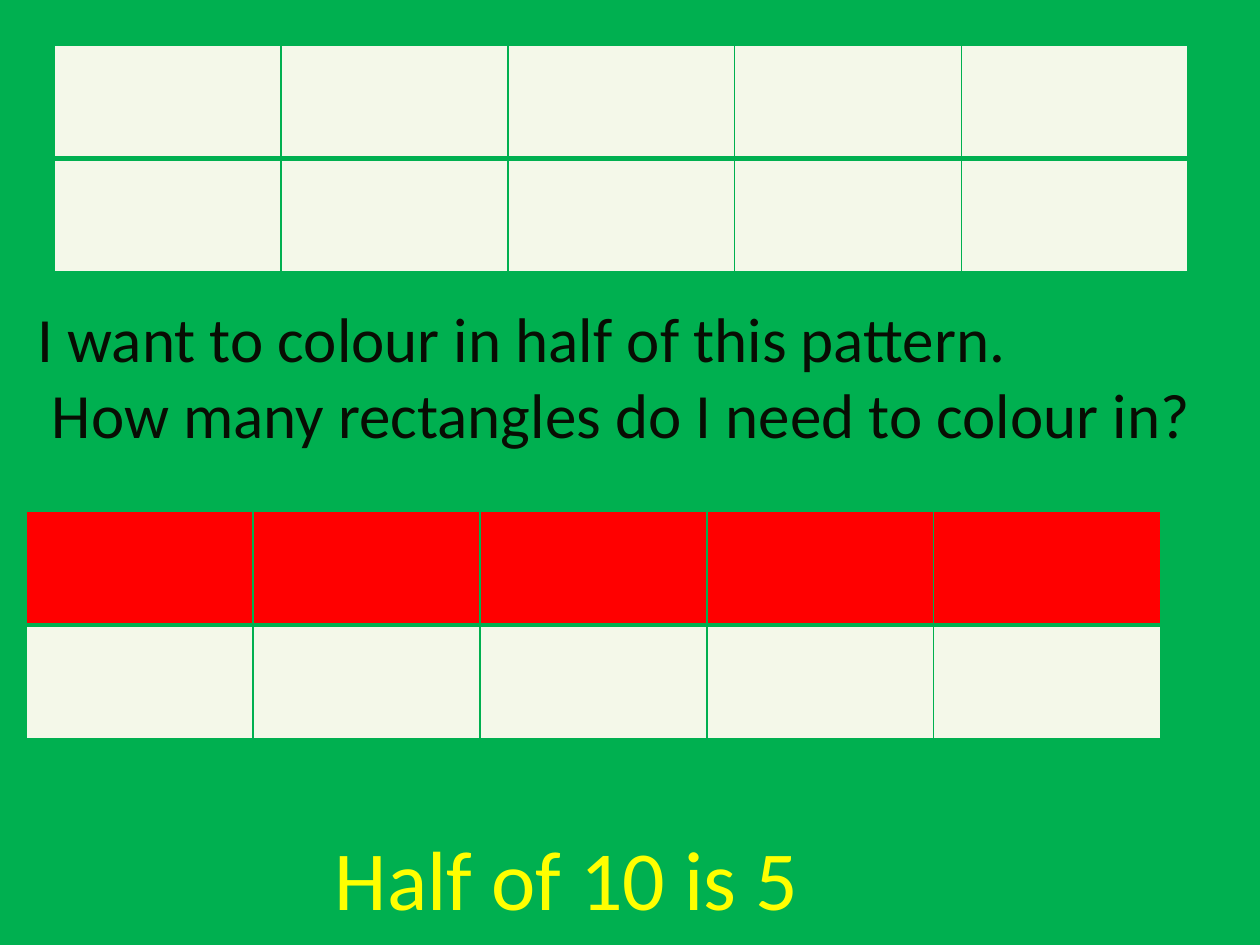
from dataclasses import dataclass
from lxml.etree import SubElement
from pptx import Presentation
from pptx.dml.color import RGBColor
from pptx.oxml.ns import qn
from pptx.util import Inches, Pt


@dataclass(frozen=True)
class Theme:
    font: str = "Calibri"
    green: str = "00B050"
    cream: str = "F4F8E9"
    red: str = "FF0000"
    ink: str = "080D03"
    yellow: str = "FFFF00"
    body: int = 36
    large: int = 48
    thin: int = 1
    thick: int = 3


class Board:
    def __init__(self, deck, theme):
        self.theme = theme
        self.slide = deck.slides.add_slide(deck.slide_layouts[6])
        self.paint(self.slide.background.fill, theme.green)

    def paint(self, fill, color):
        fill.solid()
        fill.fore_color.rgb = RGBColor.from_string(color)

    def edge(self, cell, side, width):
        line = SubElement(cell._tc.get_or_add_tcPr(), qn(f"a:ln{side}"), w=str(Pt(width)))
        fill = SubElement(line, qn("a:solidFill"))
        SubElement(fill, qn("a:srgbClr"), val=self.theme.green)

    def grid(self, left, top, fills, count=5, wide=1.8, high=0.9):
        rows = len(fills)
        table = self.slide.shapes.add_table(
            rows, count, Inches(left), Inches(top), Inches(count * wide), Inches(rows * high)
        ).table
        for name, value in {"first_row": False, "horz_banding": False}.items():
            setattr(table, name, value)
        for row, color in enumerate(fills):
            thick = {"B"} if row == 0 else {"T"}
            for cell in table.rows[row].cells:
                for side in "LRTB":
                    self.edge(cell, side, self.theme.thick if side in thick else self.theme.thin)
                self.paint(cell.fill, color)

    def text(self, box, lines, size, color):
        frame = self.slide.shapes.add_textbox(*map(Inches, box)).text_frame
        frame.word_wrap = False
        frame.text = "\n".join(lines)
        style = {"name": self.theme.font, "size": Pt(size)}
        for para in frame.paragraphs:
            for run in para.runs:
                for name, value in style.items():
                    setattr(run.font, name, value)
                run.font.color.rgb = RGBColor.from_string(color)


def main():
    deck = Presentation()
    deck.slide_width, deck.slide_height = Inches(10), Inches(7.5)
    theme = Theme()
    board = Board(deck, theme)
    board.grid(0.43, 0.36, [theme.cream, theme.cream])
    board.text(
        (0.2, 2.33, 9.43, 1.31),
        ["I want to colour in half of this pattern.", " How many rectangles do I need to colour in?"],
        theme.body,
        theme.ink,
    )
    board.grid(0.21, 4.06, [theme.red, theme.cream])
    board.text((2.56, 6.51, 3.92, 0.91), ["Half of 10 is 5"], theme.large, theme.yellow)
    deck.save("out.pptx")


if __name__ == "__main__":
    main()
